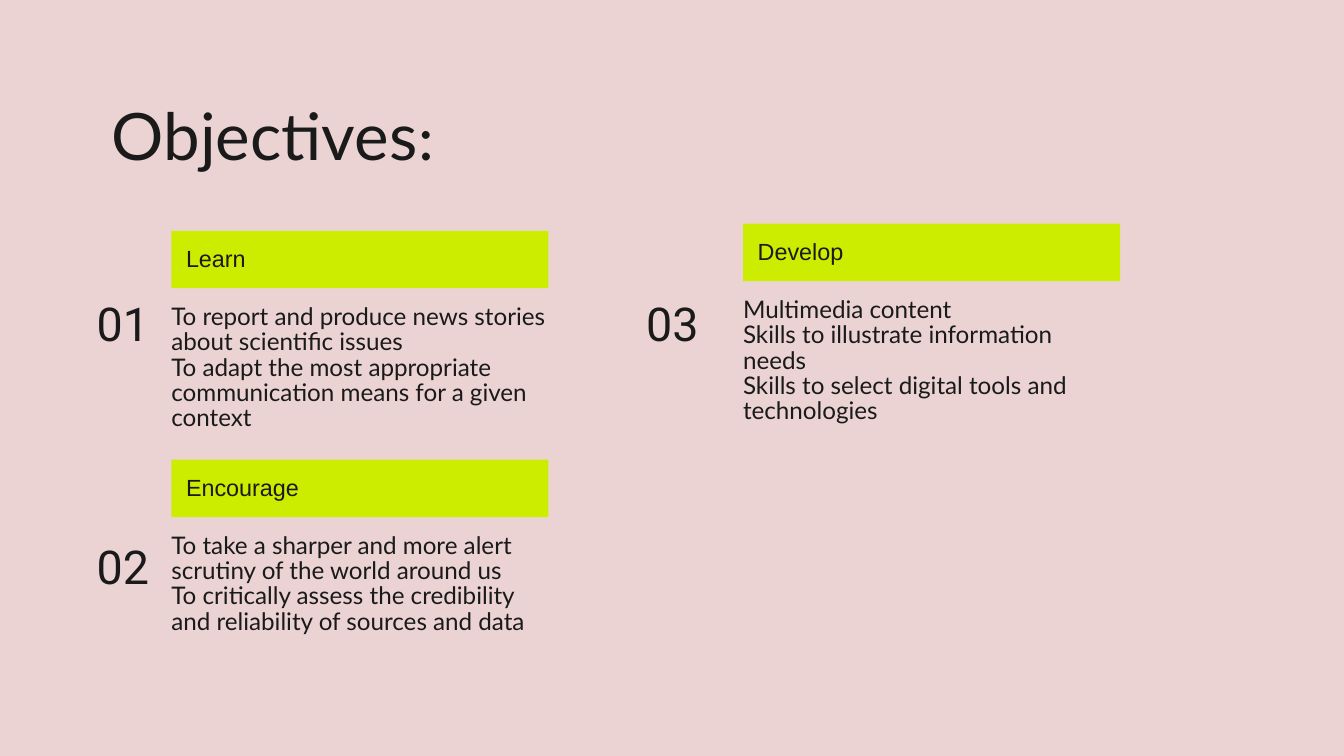
from pptx import Presentation
from pptx.dml.color import RGBColor
from pptx.enum.shapes import MSO_SHAPE
from pptx.enum.text import MSO_AUTO_SIZE
from pptx.util import Inches, Pt

RECTANGLE = MSO_SHAPE.RECTANGLE
FIT_SHAPE = MSO_AUTO_SIZE.SHAPE_TO_FIT_TEXT

PINK, LIME, INK = "EBD3D3", "CCED00", "1B1A1A"

# font, size, line spacing (points)
NUMBER_STYLE = ("Roboto", 33.3, 36.7)
LABEL_STYLE = ("Arial", 16.7, 18.3)
GOALS_STYLE = ("Lato", 17.3, 18)
TITLE_STYLE = ("Lato", 46.7, 51.3)

TITLE = ("Objectives", ":")

# number, its left and top, banner left and top, height of goals, label, goals
OBJECTIVES = [
    ("02", 0.96, 5.38, 1.7, 4.56, 1.01, "Encourage", [
        "To take a sharper and more alert scrutiny of the world around us",
        "To critically assess the credibility and reliability of sources and data",
    ]),
    ("01", 0.96, 2.97, 1.7, 2.29, 1.26, "Learn", [
        "To report and produce news stories about scientific issues",
        "To adapt the most appropriate communication means for a given context",
    ]),
    ("03", 6.41, 2.97, 7.37, 2.22, 1.26, "Develop", [
        "Multimedia content",
        "Skills to illustrate information needs",
        "Skills to select digital tools and technologies",
    ]),
]

BANNER_WIDTH, BANNER_HEIGHT = 3.74, 0.57
LABEL_INDENT, LABEL_DROP = 0.145, 0.16
LABEL_WIDTH, LABEL_HEIGHT = 3.45, 0.25
GOALS_DROP = 0.74
NUMBER_WIDTH, NUMBER_HEIGHT = 0.76, 0.52


def color(hex_code):
    return RGBColor.from_string(hex_code)


def add_text(shapes, box, lines, style):
    """Add a text box without insets, one paragraph per line."""
    font_name, size, spacing = style
    text_box = shapes.add_textbox(*[Inches(length) for length in box])
    frame = text_box.text_frame
    frame.margin_left = frame.margin_right = 0
    frame.margin_top = frame.margin_bottom = 0
    frame.text = "\n".join(lines)
    frame.word_wrap = True
    frame.auto_size = FIT_SHAPE
    for paragraph in frame.paragraphs:
        paragraph.line_spacing = Pt(spacing)
        for run in paragraph.runs:
            run.font.name = font_name
            run.font.size = Pt(size)
            run.font.color.rgb = color(INK)
    return frame


def add_title(shapes):
    word, colon = TITLE
    frame = add_text(shapes, (0.96, 1.01, 7.37, 0.72), [word], TITLE_STYLE)
    frame.margin_left = Inches(0.15)
    ending = frame.paragraphs[0].add_run()
    ending.text = colon
    ending.font.name = "Calibri"
    ending.font.size = Pt(TITLE_STYLE[1])
    ending.font.color.rgb = color(INK)


def add_objective(shapes, number, number_left, number_top,
                  left, top, goals_height, label, goals):
    card = shapes.add_group_shape().shapes
    banner = card.add_shape(RECTANGLE, Inches(left), Inches(top),
                            Inches(BANNER_WIDTH), Inches(BANNER_HEIGHT))
    banner.shadow.inherit = False
    banner.fill.solid()
    banner.fill.fore_color.rgb = color(LIME)
    banner.line.fill.background()

    add_text(card, (left + LABEL_INDENT, top + LABEL_DROP,
                    LABEL_WIDTH, LABEL_HEIGHT), [label], LABEL_STYLE)
    add_text(card, (left, top + GOALS_DROP, BANNER_WIDTH, goals_height),
             goals, GOALS_STYLE)
    add_text(shapes, (number_left, number_top, NUMBER_WIDTH, NUMBER_HEIGHT),
             [number], NUMBER_STYLE)


def main():
    deck = Presentation()
    deck.slide_width, deck.slide_height = Inches(13.33), Inches(7.5)
    slide = deck.slides.add_slide(deck.slide_layouts[6])
    slide.background.fill.solid()
    slide.background.fill.fore_color.rgb = color(PINK)

    add_title(slide.shapes)
    for objective in OBJECTIVES:
        add_objective(slide.shapes, *objective)
    deck.save("out.pptx")


if __name__ == "__main__":
    main()
